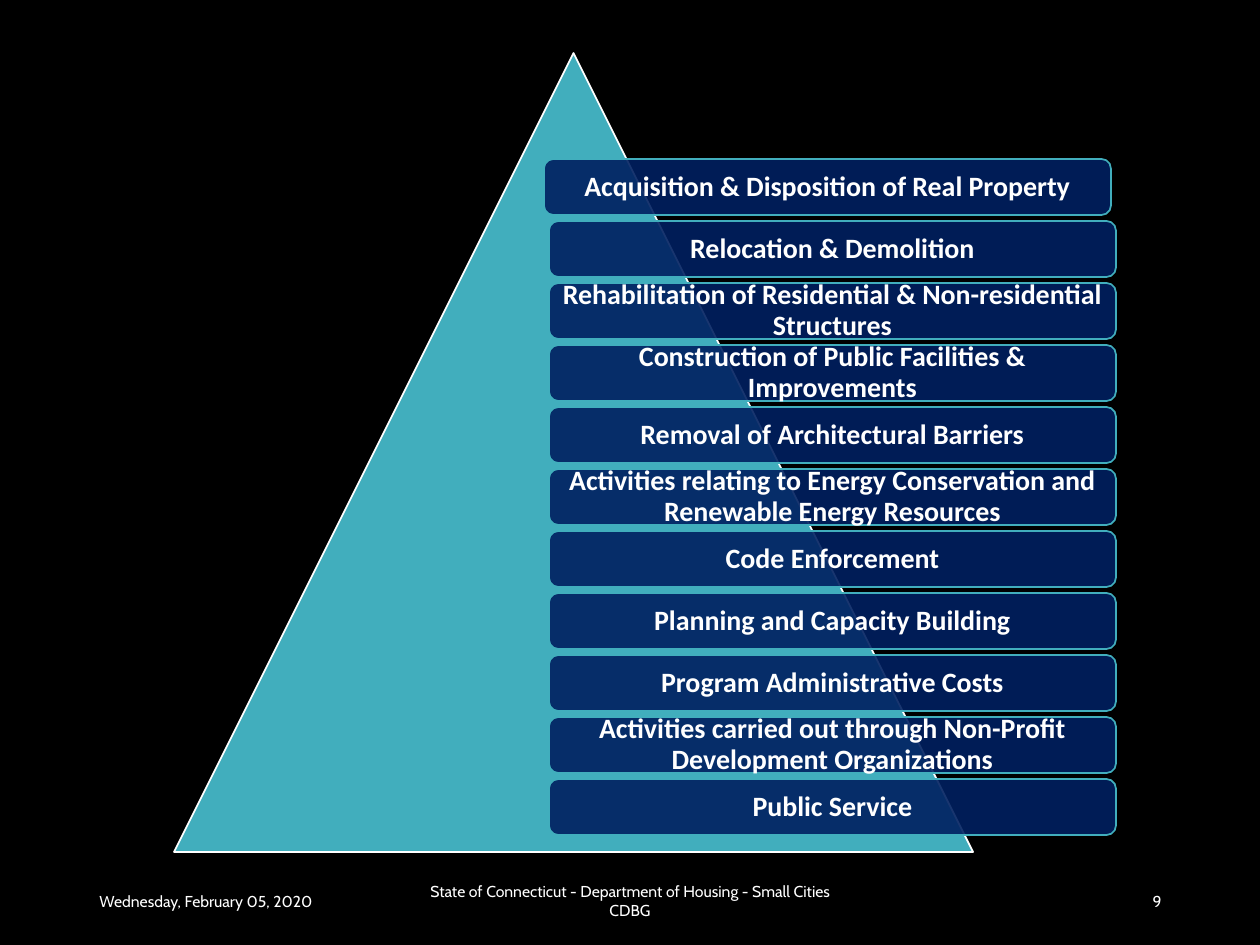
from lxml import etree
from pptx import Presentation
from pptx.dml.color import RGBColor
from pptx.enum import shapes, text
from pptx.oxml.ns import qn
from pptx.util import Emu, Pt

SCALE = 914400 / 126
KIND = shapes.MSO_SHAPE
ALIGN = text.PP_ALIGN
WHITE, TEAL, NAVY = "FFFFFF", "41AEBD", "002060"
USES = [
    "Acquisition & Disposition of Real Property",
    "Relocation & Demolition",
    "Rehabilitation of Residential & Non-residential Structures",
    "Construction of Public Facilities & Improvements",
    "Removal of Architectural Barriers",
    "Activities relating to Energy Conservation and Renewable Energy Resources",
    "Code Enforcement",
    "Planning and Capacity Building",
    "Program Administrative Costs",
    "Activities carried out through Non-Profit Development Organizations",
    "Public Service",
]
FOOTERS = [
    (87, 284, "Wednesday, February 05, 2020", ALIGN.LEFT),
    (417, 426, "State of Connecticut - Department of Housing - Small Cities CDBG", ALIGN.CENTER),
    (890, 284, "9", ALIGN.RIGHT),
]


def px(*sizes):
    return [Emu(round(size * SCALE)) for size in sizes]


def color(code):
    return RGBColor.from_string(code)


class Sketch:
    """Holds the style and the current slide, and draws each kind of element."""

    def __init__(self, slide):
        self.slide = slide
        fill = slide.background.fill
        fill.solid()
        fill.fore_color.rgb = color("000000")

    def shape(self, kind, box, fill, line, alpha=100):
        item = self.slide.shapes.add_shape(kind, *px(*box))
        item.shadow.inherit = False
        item.fill.solid()
        item.fill.fore_color.rgb = color(fill)
        item.line.color.rgb = color(line)
        item.line.width = Pt(1)
        if alpha < 100:
            tint = item.element.spPr.find(qn("a:solidFill"))[0]
            etree.SubElement(tint, qn("a:alpha"), val=str(alpha * 1000))
        return item

    def label(self, item, words, size, face, align, bold=False):
        frame = item.text_frame
        frame.word_wrap = True
        frame.vertical_anchor = text.MSO_ANCHOR.MIDDLE
        para = frame.paragraphs[0]
        para.text = words
        para.alignment = align
        font = para.font
        font.size, font.name, font.bold = Pt(size), face, bold
        font.color.rgb = color(WHITE)
        return frame

    def bar(self, box, words):
        item = self.shape(KIND.ROUNDED_RECTANGLE, box, NAVY, TEAL, 90)
        frame = self.label(item, words, 16, "Calibri", ALIGN.CENTER, True)
        frame.paragraphs[0].line_spacing = 0.9
        pad, = px(9)
        frame.margin_left = frame.margin_right = pad
        frame.margin_top = frame.margin_bottom = pad

    def footer(self, left, width, words, align):
        item = self.slide.shapes.add_textbox(*px(left, 876, width, 50))
        self.label(item, words, 9, "Cabin", align)


def main():
    deck = Presentation()
    deck.slide_width, deck.slide_height = px(1260, 945)
    sketch = Sketch(deck.slides.add_slide(deck.slide_layouts[6]))
    for entry in FOOTERS:
        sketch.footer(*entry)
    sketch.shape(KIND.ISOSCELES_TRIANGLE, (174, 53, 799, 799), TEAL, WHITE)
    for row, words in enumerate(USES):
        left = 549 if row else 544
        sketch.bar((left, 159 + 62 * row, 567, 56), words)
    deck.save("out.pptx")


if __name__ == "__main__":
    main()
